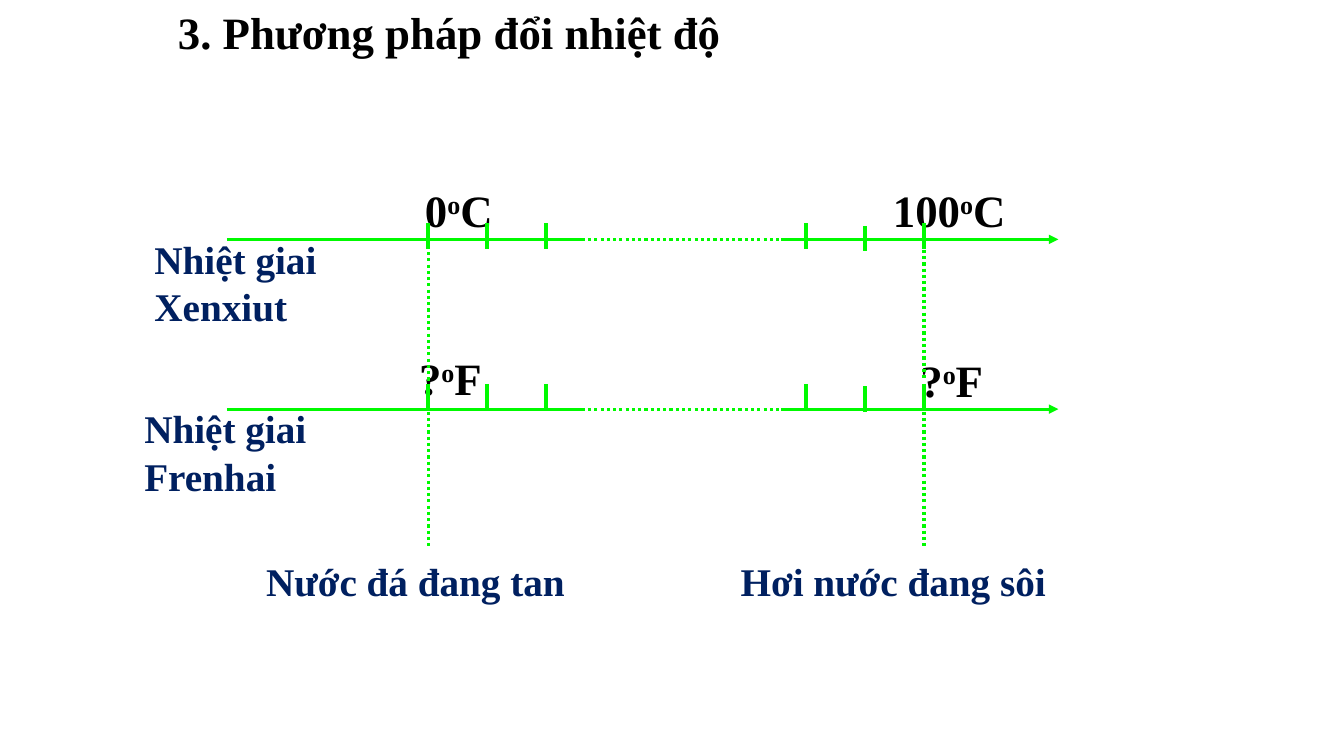
from dataclasses import dataclass

from lxml.etree import SubElement
from pptx import Presentation
from pptx.dml.color import RGBColor as Rgb
from pptx.enum.dml import MSO_LINE_DASH_STYLE as Dash
from pptx.enum.shapes import MSO_CONNECTOR as Connector
from pptx.enum.text import MSO_AUTO_SIZE as AutoSize, PP_ALIGN as Align
from pptx.oxml.ns import qn
from pptx.util import Inches, Pt


@dataclass(frozen=True)
class Theme:
    font: str = "Times New Roman"
    ink: Rgb = Rgb(0, 0, 0)
    caption: Rgb = Rgb(0x00, 0x20, 0x60)
    scale: Rgb = Rgb(0x00, 0xFA, 0x00)
    large: int = 32
    medium: int = 28
    axis_width: float = 2.25
    tick_width: float = 3


THEME = Theme()
WIDTH, HEIGHT = Inches(13.33), Inches(7.5)
COLUMNS, ROWS = 160, 90

MELTING, BOILING = 51, 110
AXIS_START, GAP_START, GAP_END, AXIS_END = 27, 69.25, 93, 126
TICK_HEIGHT = 3
LOWERED_TICK, LOWERING = 103, 0.3
TICKS = (MELTING, 58, 65, 96, LOWERED_TICK, BOILING)


def col(n):
    return round(WIDTH * n / COLUMNS)


def row(n):
    return round(HEIGHT * n / ROWS)


def add_text(shapes, text, left, top, width, height, *, size=THEME.large,
             color=THEME.ink, align=Align.LEFT):
    """Write bold text; parts between ^ marks are raised."""
    frame = shapes.add_textbox(col(left), row(top), col(width), row(height)).text_frame
    frame.word_wrap = True
    frame.auto_size = AutoSize.SHAPE_TO_FIT_TEXT
    paragraph = frame.paragraphs[0]
    paragraph.alignment = align
    for index, part in enumerate(text.split("^")):
        run = paragraph.add_run()
        run.text = part
        font = run.font
        font.name, font.size, font.bold = THEME.font, Pt(size), True
        font.color.rgb = color
        if index % 2:
            run._r.get_or_add_rPr().set("baseline", "30000")


def add_caption(shapes, text, *box):
    add_text(shapes, text, *box, size=THEME.medium, color=THEME.caption)


def add_line(shapes, x1, y1, x2, y2, *, width=THEME.axis_width, dotted=False, arrow=False):
    connector = shapes.add_connector(Connector.STRAIGHT, col(x1), row(y1), col(x2), row(y2))
    connector.line.color.rgb = THEME.scale
    connector.line.width = Pt(width)
    if dotted:
        connector.line.dash_style = Dash.ROUND_DOT
    if arrow:
        SubElement(connector.line._get_or_add_ln(), qn("a:tailEnd"), type="triangle")
    SubElement(connector._element.spPr, qn("a:effectLst"))


def add_scale(slide, axis, tick_top):
    """Draw a thermometer axis whose middle part is dotted."""
    shapes = slide.shapes.add_group_shape().shapes
    add_line(shapes, AXIS_START, axis, GAP_START, axis)
    add_line(shapes, GAP_START, axis, GAP_END, axis, dotted=True)
    add_line(shapes, GAP_END, axis, AXIS_END, axis, arrow=True)
    for x in TICKS:
        top = tick_top + (LOWERING if x == LOWERED_TICK else 0)
        add_line(shapes, x, top, x, top + TICK_HEIGHT, width=THEME.tick_width)


def main():
    deck = Presentation()
    deck.slide_width, deck.slide_height = WIDTH, HEIGHT
    slide = deck.slides.add_slide(deck.slide_layouts[6])
    shapes = slide.shapes

    add_text(shapes, "3. Phương pháp đổi nhiệt độ", 20, 0, 81, 7.7)

    add_caption(shapes, "Nhiệt giai Xenxiut", 17.2, 27.4, 22.3, 12.5)
    add_text(shapes, "0^o^C", 49.4, 21.2, 13, 7.7)
    add_text(shapes, "100^o^C", 102.5, 21.2, 21, 7.7, align=Align.CENTER)
    add_scale(slide, axis=28.5, tick_top=26.6)

    add_caption(shapes, "Nhiệt giai Frenhai", 16, 47.6, 23.8, 12.5)
    add_text(shapes, "?^o^F", 48.7, 41.2, 13, 7.7)
    add_text(shapes, "?^o^F", 104.8, 41.4, 17, 7.7, align=Align.CENTER)
    add_scale(slide, axis=48.7, tick_top=45.7)

    add_caption(shapes, "Nước đá đang tan", 30.5, 65.8, 41, 6.8)
    add_caption(shapes, "Hơi nước đang sôi", 87, 65.8, 46, 6.8)
    for x, top, bottom in ((MELTING, 30, 46), (BOILING, 29, 45),
                           (MELTING, 49, 65), (BOILING, 49, 65)):
        add_line(shapes, x, top, x, bottom, dotted=True)

    deck.save("out.pptx")


if __name__ == "__main__":
    main()
